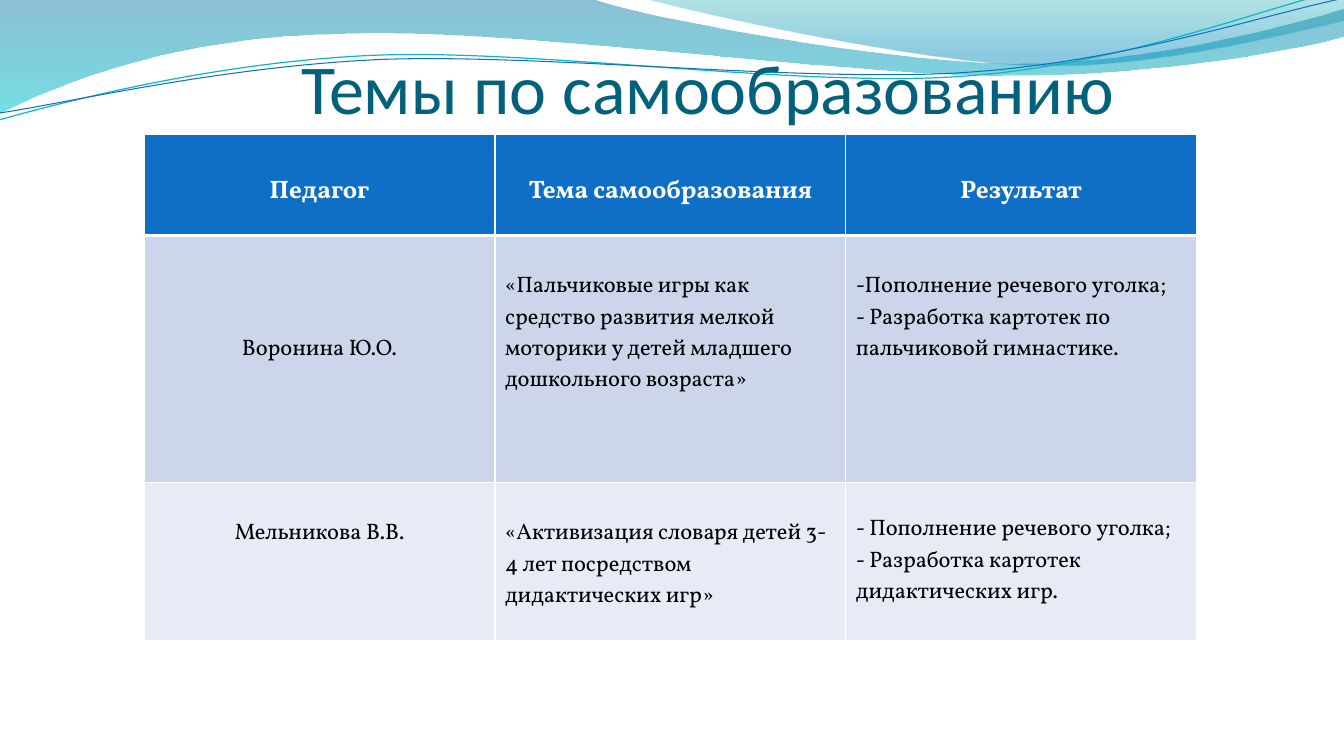
import math

import pptx
import pptx.dml.color
import pptx.enum.text
import pptx.oxml
import pptx.oxml.ns
import pptx.util

SLIDE_WIDTH = pptx.util.Inches(13.33)
SLIDE_HEIGHT = pptx.util.Inches(7.5)
LINE_TILT = 2.7  # degrees, counter-clockwise
CENTER = pptx.enum.text.PP_ALIGN.CENTER
LEFT = pptx.enum.text.PP_ALIGN.LEFT

# Each wave is a start point, then lines (2 numbers) and curves (6), in inches
WIDE_WAVE = [
    (0, 0), (5.87, -0.01), (6.34, 0.17, 8.85, 0.63, 10.11, 0.63),
    (11.38, 0.63, 12.78, 0.26, 13.33, 0.09), (13.35, 0.36),
    (13.11, 0.44, 11.6, 0.76, 9.94, 0.75), (8.29, 0.75, 5.09, 0.28, 3.43, 0.34),
    (1.72, 0.36, 0.61, 0.83, -0.01, 1.13), (0, 0)]
RIGHT_WAVE = [
    (6.39, -0.01), (6.79, 0.11, 9.09, 0.62, 10.25, 0.65),
    (11.41, 0.69, 12.82, 0.32, 13.33, 0.21), (13.33, 0), (6.39, -0.01)]
TEAL_LINE = [
    (-0.01, 1.19), (0.64, 1.01, 2.11, 0.62, 3.69, 0.55),
    (5.27, 0.48, 7.9, 0.87, 9.5, 0.76), (11.1, 0.66, 12.52, 0.08, 13.31, -0.1)]
BLUE_LINE = [
    (0, 1.12), (0.63, 1.03, 2.18, 0.66, 3.78, 0.59),
    (5.37, 0.53, 7.96, 0.82, 9.55, 0.72), (11.15, 0.62, 12.55, 0.14, 13.34, -0.02)]

# Row height in inches, fill, text size, bold, text colour, bottom border in points,
# then the cells: top margin in inches, alignment, paragraphs
ROWS = [
    (1, "0F6FC6", 18, True, "FFFFFF", 3, [
        (0.4, CENTER, ["Педагог"]),
        (0.4, CENTER, ["Тема самообразования"]),
        (0.4, CENTER, ["Результат"])]),
    (2.45, "CCD5EA", 16, False, "000000", 1, [
        (0.98, CENTER, ["Воронина Ю.О."]),
        (0.36, LEFT, ["«Пальчиковые игры как средство развития мелкой моторики "
                      "у детей младшего дошкольного возраста»"]),
        (0.36, LEFT, ["-Пополнение речевого уголка;",
                      "- Разработка картотек по пальчиковой гимнастике."])]),
    (1.57, "E7EBF5", 16, False, "000000", 1, [
        (0.36, CENTER, ["Мельникова В.В."]),
        (0.36, LEFT, ["«Активизация словаря детей 3-4 лет посредством "
                      "дидактических игр»"]),
        (0.32, LEFT, ["- Пополнение речевого уголка;",
                      "- Разработка картотек дидактических игр."])]),
]


def color(hex_string):
    return pptx.dml.color.RGBColor.from_string(hex_string)


def drawing_element(tag, attributes="", content=""):
    namespace = pptx.oxml.ns.nsdecls("a")
    return pptx.oxml.parse_xml(f"<a:{tag} {namespace} {attributes}>{content}</a:{tag}>")


def box(left, top, width, height):
    """Turn percentages of the slide into lengths."""
    return [pptx.util.Emu(round(share * side / 100)) for share, side in
            zip((left, top, width, height), (SLIDE_WIDTH, SLIDE_HEIGHT) * 2)]


def add_run(paragraph, text, font_name, size, hex_string, bold=False):
    run = paragraph.add_run()
    run.text = text
    run.font.name = font_name
    run.font.size = pptx.util.Pt(size)
    run.font.bold = bold
    run.font.color.rgb = color(hex_string)


def turn(point, degrees):
    """Turn a point clockwise about the middle of the tilted lines."""
    x, y = point[0] - 6.66, point[1] - 0.58
    sine, cosine = math.sin(math.radians(degrees)), math.cos(math.radians(degrees))
    return 6.66 + x * cosine - y * sine, 0.58 + x * sine + y * cosine


def add_wave(slide, wave, closed, tilt=0):
    points = [turn(segment[index:index + 2], tilt)
              for segment in wave for index in range(0, len(segment), 2)]
    points = [(pptx.util.Inches(x), pptx.util.Inches(y)) for x, y in points]
    builder = slide.shapes.build_freeform(*points[0], scale=1.0)
    builder.add_line_segments(points[1:], close=closed)
    shape = builder.convert_to_shape()
    shape.rotation = -tilt
    shape.shadow.inherit = False
    # Join the three points of each curve into one Bezier segment
    steps = iter(list(shape._element.spPr.iter(pptx.oxml.ns.qn("a:lnTo"))))
    for segment in wave[1:]:
        first = next(steps)
        if len(segment) == 6:
            curve = drawing_element("cubicBezTo")
            first.addprevious(curve)
            for step in (first, next(steps), next(steps)):
                curve.append(step[0])
                step.getparent().remove(step)
    return shape


def add_filled_wave(slide, wave, stops):
    shape = add_wave(slide, wave, closed=True)
    shape.line.fill.background()
    shape.fill.gradient()
    shape.fill.gradient_angle = 270
    for stop, (position, hex_string, opacity) in zip(shape.fill.gradient_stops, stops):
        stop.position = position
        stop.color.rgb = color(hex_string)
    tag = pptx.oxml.ns.qn("a:srgbClr")
    for element, (position, hex_string, opacity) in zip(shape._element.spPr.iter(tag), stops):
        element.append(drawing_element("alpha", f'val="{opacity * 1000}"'))


def add_line_wave(slide, wave, hex_string, width):
    shape = add_wave(slide, wave, closed=False, tilt=LINE_TILT)
    shape.fill.background()
    shape.line.color.rgb = color(hex_string)
    shape.line.width = pptx.util.Pt(width)


def format_title(slide, text):
    title = slide.shapes.title
    slide.shapes._spTree.append(title._element)  # in front of the waves
    title.left, title.top, title.width, title.height = box(22.43, 3.33, 70, 13.73)
    frame = title.text_frame
    frame.word_wrap = True
    frame.auto_size = pptx.enum.text.MSO_AUTO_SIZE.NONE
    frame.vertical_anchor = pptx.enum.text.MSO_ANCHOR.BOTTOM
    frame.margin_left = frame.margin_right = frame.margin_bottom = 0
    frame.margin_top = pptx.util.Inches(0.05)
    frame.paragraphs[0].alignment = LEFT
    add_run(frame.paragraphs[0], text, "Calibri", 50, "04617B")


def set_borders(cell, bottom):
    properties = cell._tc.get_or_add_tcPr()
    for side, width in (("L", 1), ("R", 1), ("T", 1), ("B", bottom)):
        properties.append(drawing_element(
            f"ln{side}", f'w="{pptx.util.Pt(width)}"',
            '<a:solidFill><a:srgbClr val="FFFFFF"/></a:solidFill>'))


def add_topics_table(slide):
    frame = slide.shapes.add_table(len(ROWS), 3, *box(10.72, 17.8, 78.32, 66.93))
    table = frame.table
    table.first_row = table.horz_banding = False
    for row_index, (height, fill, size, bold, text_color, bottom, cells) in enumerate(ROWS):
        table.rows[row_index].height = pptx.util.Inches(height)
        for column_index, (top_margin, alignment, paragraphs) in enumerate(cells):
            cell = table.cell(row_index, column_index)
            set_borders(cell, bottom)
            cell.fill.solid()
            cell.fill.fore_color.rgb = color(fill)
            cell.margin_top = pptx.util.Inches(top_margin)
            for index, text in enumerate(paragraphs):
                text_frame = cell.text_frame
                paragraph = text_frame.add_paragraph() if index else text_frame.paragraphs[0]
                paragraph.alignment = alignment
                add_run(paragraph, text, "Vollkorn", size, text_color, bold)


def main():
    presentation = pptx.Presentation()
    presentation.slide_width = SLIDE_WIDTH
    presentation.slide_height = SLIDE_HEIGHT
    slide = presentation.slides.add_slide(presentation.slide_layouts[5])

    # Waves along the top edge
    add_filled_wave(slide, WIDE_WAVE, [(0, "0074A1", 45), (1, "00C6CF", 55)])
    add_filled_wave(slide, RIGHT_WAVE, [(0, "00A1A9", 30), (0.8, "008BBF", 45)])
    add_line_wave(slide, TEAL_LINE, "0AB8BF", 0.85)
    add_line_wave(slide, BLUE_LINE, "0F6FC6", 0.75)

    # Title and table
    format_title(slide, "Темы по самообразованию")
    add_topics_table(slide)
    presentation.save("out.pptx")


if __name__ == "__main__":
    main()
